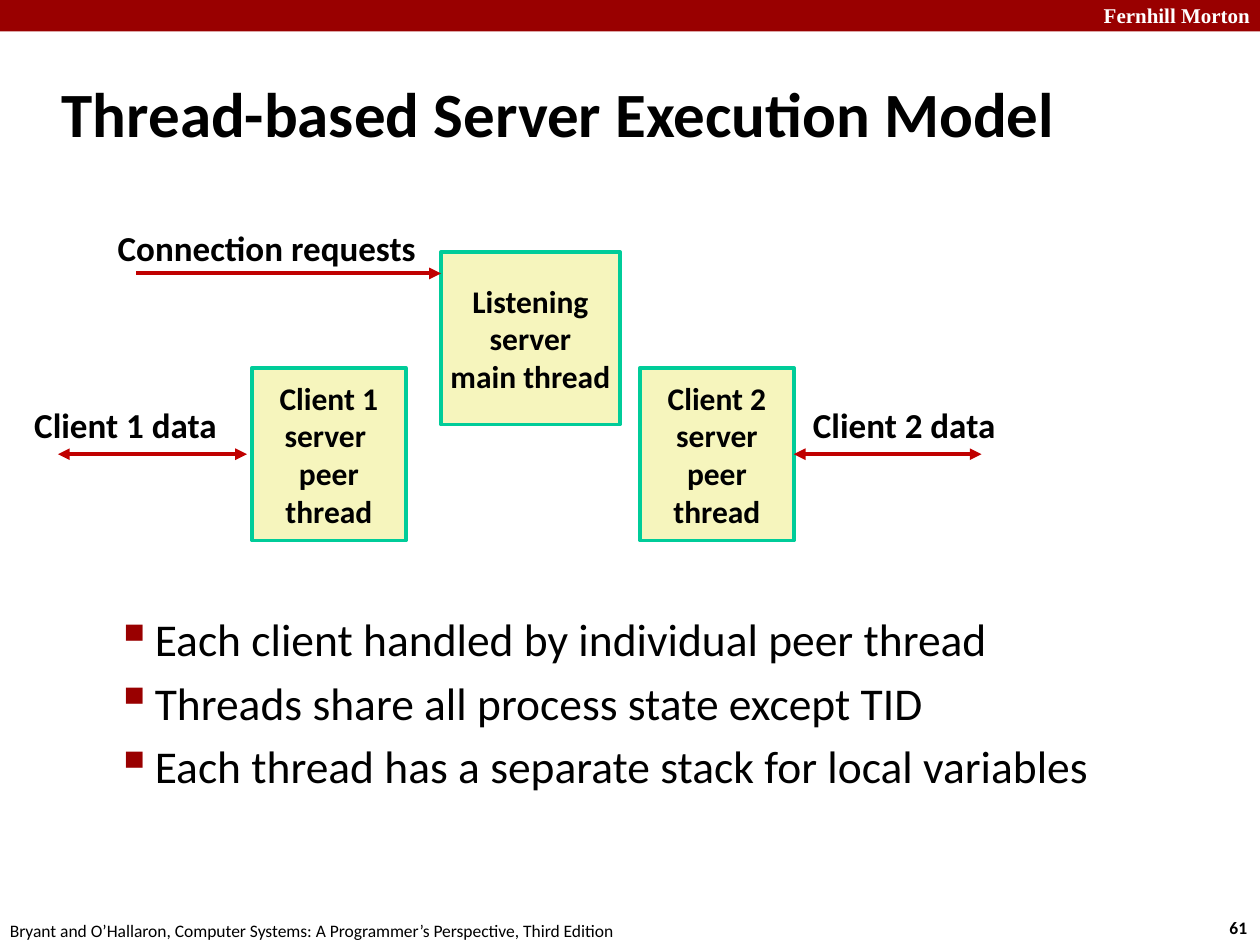
from dataclasses import dataclass

from lxml import etree
from pptx import Presentation, util as u
from pptx.dml.color import RGBColor
from pptx.enum import shapes, text
from pptx.oxml.ns import qn

Inches, Pt = u.Inches, u.Pt
LEFT, CENTER, RIGHT = text.PP_ALIGN.LEFT, text.PP_ALIGN.CENTER, text.PP_ALIGN.RIGHT
MIDDLE, TOP = text.MSO_ANCHOR.MIDDLE, text.MSO_ANCHOR.TOP


@dataclass(frozen=True)
class Theme:
    font: str = "Calibri"
    brand_font: str = "Times New Roman"
    black: str = "000000"
    white: str = "FFFFFF"
    banner: str = "990000"
    arrow: str = "C00000"
    box_fill: str = "F6F5BD"
    box_line: str = "00CC99"
    title: int = 36
    body: int = 26
    label: int = 20
    box: int = 18
    brand: int = 12
    footer: int = 10
    line: float = 2.25


T = Theme()


def write(sp, content, size, bold=True, color=T.black, font=T.font,
          align=LEFT, anchor=TOP, wrap=False):
    """Fill a shape with one paragraph per line and format every run."""
    tf = sp.text_frame
    tf.text = content
    tf.word_wrap = wrap
    tf.vertical_anchor = anchor
    for p in tf.paragraphs:
        p.alignment = align
        for r in p.runs:
            r.font.name, r.font.size, r.font.bold = font, Pt(size), bold
            r.font.color.rgb = RGBColor.from_string(color)
    return tf


def add_arrow(x1, x2, y, both_ends=True):
    """Draw a horizontal arrow with its head at x2, or at both ends."""
    cxn = s.shapes.add_connector(shapes.MSO_CONNECTOR.STRAIGHT,
                                 Inches(x1), Inches(y), Inches(x2), Inches(y))
    cxn.line.color.rgb = RGBColor.from_string(T.arrow)
    cxn.line.width = Pt(T.line)
    ln = cxn.line._get_or_add_ln()
    for end in ("a:headEnd", "a:tailEnd") if both_ends else ("a:tailEnd",):
        etree.SubElement(ln, qn(end), type="triangle")
    etree.SubElement(cxn._element.spPr, qn("a:effectLst"))
    return cxn


prs = Presentation()
prs.slide_width, prs.slide_height = Inches(10), Inches(7.5)
s = prs.slides.add_slide(prs.slide_layouts[5])

# Banner
sp = s.shapes.add_shape(shapes.MSO_SHAPE.RECTANGLE, 0, 0, prs.slide_width, Inches(0.25))
sp.shadow.inherit = False
sp.fill.solid()
sp.fill.fore_color.rgb = RGBColor.from_string(T.banner)
sp.line.fill.background()
sp = s.shapes.add_textbox(Inches(8.64), Inches(-0.03), Inches(1.38), Inches(0.3))
write(sp, "Fernhill Morton", T.brand, color=T.white, font=T.brand_font, align=RIGHT)

# Title
sp = s.shapes.title
sp.left, sp.top, sp.width, sp.height = (Inches(v) for v in (0.39, 0.48, 8.3, 0.83))
write(sp, "Thread-based Server Execution Model", T.title, anchor=MIDDLE, wrap=True)

# Thread boxes, all of one height
box_h, peer_top, peer_w = 1.37, 2.92, 1.22
boxes = {}
for name, x, y, w, content in (
    ("client 1", 2, peer_top, peer_w, "Client 1\nserver \npeer\nthread"),
    ("client 2", 5.08, peer_top, peer_w, "Client 2\nserver\npeer\nthread"),
    ("listener", 3.5, 2, 1.42, "Listening\nserver\nmain thread"),
):
    sp = s.shapes.add_shape(shapes.MSO_SHAPE.RECTANGLE,
                            Inches(x), Inches(y), Inches(w), Inches(box_h))
    sp.shadow.inherit = False
    sp.fill.solid()
    sp.fill.fore_color.rgb = RGBColor.from_string(T.box_fill)
    sp.line.color.rgb = RGBColor.from_string(T.box_line)
    sp.line.width = Pt(T.line)
    write(sp, content, T.box, align=CENTER, anchor=MIDDLE)
    boxes[name] = sp

# Arrows: requests to the listener, data to and from the peers
data_y = peer_top + box_h / 2
add_arrow(1.08, 3.5, 2.17, both_ends=False)
add_arrow(0.46, 1.96, data_y)
cxn = add_arrow(7.79, 6.3, data_y)
cxn.end_connect(boxes["client 2"], 3)

# Arrow labels
for content, x, y, w in (
    ("Connection requests", 0.8, 1.75, 2.6),
    ("Client 1 data", 0.15, 3.15, 1.67),
    ("Client 2 data", 6.33, 3.15, 1.67),
):
    sp = s.shapes.add_textbox(Inches(x), Inches(y), Inches(w), Inches(0.44))
    write(sp, content, T.label, align=RIGHT)

# Bulleted points
points = (
    "Each client handled by individual peer thread",
    "Threads share all process state except TID",
    "Each thread has a separate stack for local variables",
)
sp = s.shapes.add_textbox(Inches(0.32), Inches(4.8), Inches(9.09), Inches(2.22))
tf = write(sp, "\n".join(points), T.body, bold=False, wrap=True)
for p in tf.paragraphs:
    p.space_before = Pt(T.body * 0.2)
    pPr = p._p.get_or_add_pPr()
    pPr.set("marL", str(Inches(0.81)))
    pPr.set("indent", str(Inches(-0.31)))
    color = etree.SubElement(pPr, qn("a:buClr"))
    etree.SubElement(color, qn("a:srgbClr"), val=T.banner)
    etree.SubElement(pPr, qn("a:buSzPct"), val="110000")
    etree.SubElement(pPr, qn("a:buChar"), char="▪")

# Footer
sp = s.shapes.add_textbox(Inches(-0.02), Inches(7.25), Inches(5.08), Inches(0.27))
write(sp, "Bryant and O’Hallaron, Computer Systems: A Programmer’s Perspective, Third Edition",
      T.footer, bold=False)
sp = s.shapes.add_textbox(Inches(9.66), Inches(7.23), Inches(0.37), Inches(0.27))
write(sp, "61", T.footer)

prs.save("out.pptx")
